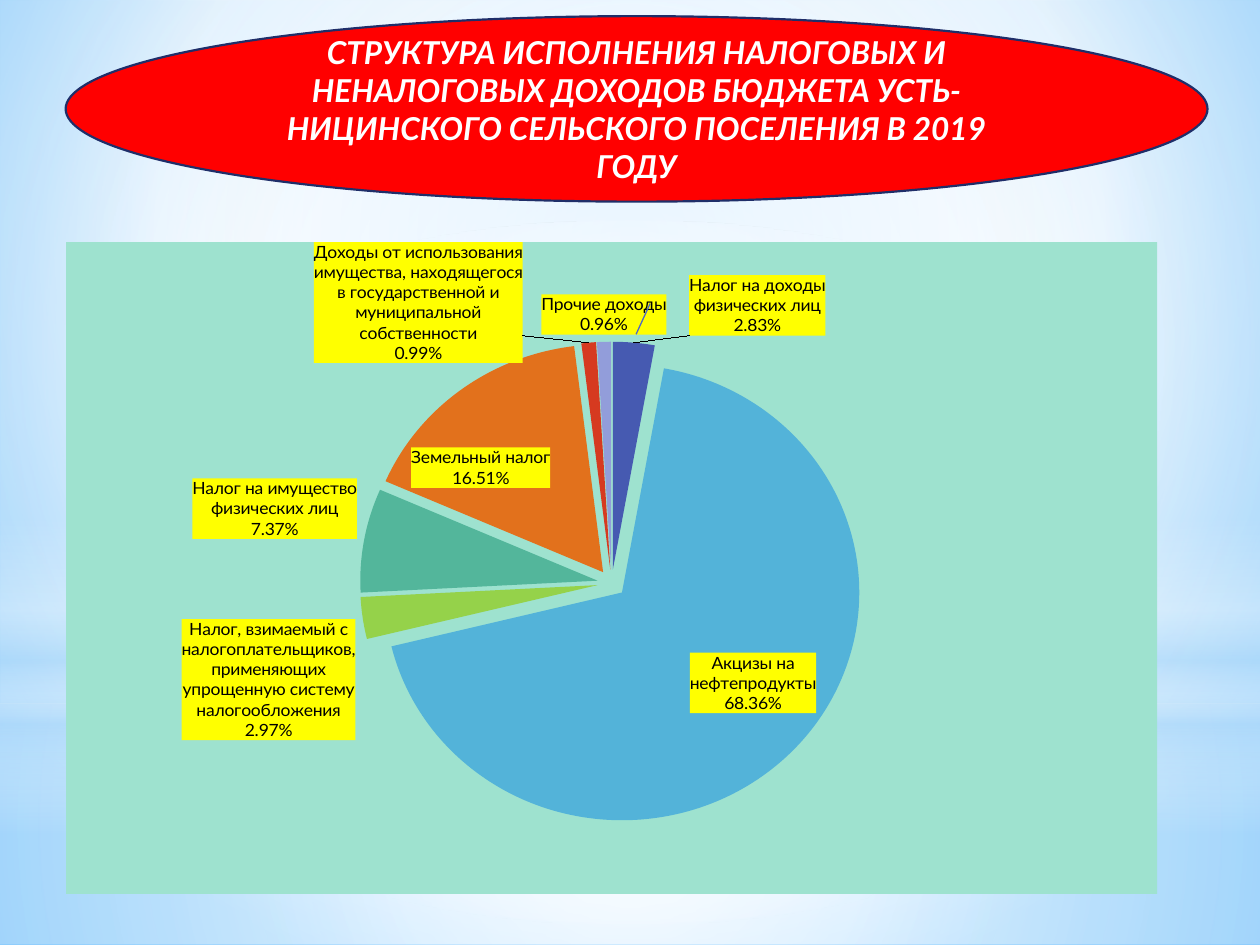
import pptx
import pptx.chart.data
import pptx.dml.color
import pptx.enum.chart
import pptx.enum.shapes
import pptx.enum.text
import pptx.oxml
import pptx.oxml.ns
import pptx.util
from dataclasses import dataclass

Pt = pptx.util.Pt
qn = pptx.oxml.ns.qn
SHAPE = pptx.enum.shapes.MSO_SHAPE
NAMESPACES = pptx.oxml.ns.nsdecls("a", "c")


@dataclass(frozen=True)
class Theme:
    font: str = "Lato"
    title_size: int = 18
    label_size: int = 10
    white: str = "FFFFFF"
    black: str = "000000"
    sky: str = "9ED5FF"
    azure: str = "5BB9FF"
    haze: str = "B4DCFA"
    title_fill: str = "FF0000"
    title_line: str = "1F2E69"
    chart_fill: str = "9EE2CF"
    label_fill: str = "FFFF00"
    leader: str = "4E67C8"
    slices: tuple = ("465AB1", "53B3D9", "95D24A", "53B69B", "E2711C", "D63A20", "929DDA")


THEME = Theme()
CENTRE = (50, 50, 50, 50)

TITLE = ("СТРУКТУРА ИСПОЛНЕНИЯ НАЛОГОВЫХ И НЕНАЛОГОВЫХ ДОХОДОВ БЮДЖЕТА "
         "УСТЬ-НИЦИНСКОГО СЕЛЬСКОГО ПОСЕЛЕНИЯ В 2019 ГОДУ")

# Category and share in percent
INCOME = [
    ("Налог на доходы физических лиц", 2.83),
    ("Акцизы на нефтепродукты", 68.36),
    ("Налог, взимаемый с налогоплательщиков, применяющих упрощенную систему "
     "налогообложения", 2.97),
    ("Налог на имущество физических лиц", 7.37),
    ("Земельный налог", 16.51),
    ("Доходы от использования имущества, находящегося в государственной и "
     "муниципальной собственности", 0.99),
    ("Прочие доходы", 0.96),
]
# Labels moved off their usual place, as fractions of the chart
LABEL_SHIFTS = {0: (0.05, 0), 5: (-0.06, 0)}


def rgb(value):
    return pptx.dml.color.RGBColor.from_string(value)


def paint(fill, color):
    fill.solid()
    fill.fore_color.rgb = rgb(color)


def gradient(stops, focus=None):
    """Gradient from (position, colour, opacity) stops; radial if focus is given."""
    marks = "".join(
        f'<a:gs pos="{position * 1000}"><a:srgbClr val="{color}">'
        f'<a:alpha val="{opacity * 1000}"/></a:srgbClr></a:gs>'
        for position, color, opacity in stops)
    if focus:
        sides = " ".join(f'{side}="{value * 1000}"' for side, value in zip("ltrb", focus))
        course = f'<a:path path="circle"><a:fillToRect {sides}/></a:path>'
    else:
        course = '<a:lin ang="5400000" scaled="0"/>'
    return pptx.oxml.parse_xml(
        f'<a:gradFill {NAMESPACES} rotWithShape="1"><a:gsLst>{marks}</a:gsLst>{course}</a:gradFill>')


def set_gradient(fill, holder, stops, focus=None):
    fill.gradient()
    old = next(holder.iter(qn("a:gradFill")))
    old.getparent().replace(old, gradient(stops, focus))


def add_glow(page, kind, top, height, stops, focus=None):
    shape = page.shapes.add_shape(kind, 0, Pt(top), Pt(720), Pt(height))
    shape.shadow.inherit = False
    shape.line.fill.background()
    set_gradient(shape.fill, shape.element.spPr, stops, focus)


def add_backdrop(page):
    white, haze = THEME.white, THEME.haze
    set_gradient(page.background.fill, page.element,
                 [(0, THEME.sky, 100), (60, white, 100), (100, THEME.azure, 100)],
                 (20, 10, 20, 60))
    add_glow(page, SHAPE.RECTANGLE, 402, 138,
             [(0, white, 91), (37, white, 76), (100, haze, 79)], CENTRE)
    add_glow(page, SHAPE.RECTANGLE, 0, 402,
             [(0, white, 89), (48, white, 62), (100, haze, 79)], CENTRE)
    add_glow(page, SHAPE.RECTANGLE, 296.5, 180,
             [(0, white, 0), (29, white, 30), (45, haze, 40),
              (55, white, 26), (65, haze, 60), (100, white, 0)])
    add_glow(page, SHAPE.OVAL, 126, 402, [(0, white, 100), (56, white, 0)], CENTRE)


def set_manual_layout(holder, place, **values):
    """Put a c:layout with the given settings at a place among the children."""
    settings = "".join(f'<c:{key} val="{value}"/>' for key, value in values.items())
    for old in holder.findall(qn("c:layout")):
        holder.remove(old)
    holder.insert(place, pptx.oxml.parse_xml(
        f"<c:layout {NAMESPACES}><c:manualLayout>{settings}</c:manualLayout></c:layout>"))


def chart_fill(color):
    return pptx.oxml.parse_xml(
        f'<c:spPr {NAMESPACES}><a:solidFill><a:srgbClr val="{color}"/></a:solidFill>'
        "<a:ln><a:noFill/></a:ln></c:spPr>")


def separator():
    return pptx.oxml.parse_xml(f"<c:separator {NAMESPACES}>\n</c:separator>")


def format_labels(labels):
    labels.show_category_name = True
    labels.show_value = True
    labels.show_percentage = False
    labels.number_format = '0.00"%"'
    labels.number_format_is_linked = False
    labels.font.size = Pt(THEME.label_size)
    labels.font.name = THEME.font
    labels.font.color.rgb = rgb(THEME.black)
    labels.position = pptx.enum.chart.XL_LABEL_POSITION.BEST_FIT
    element = labels._element
    element.find(qn("c:numFmt")).addnext(chart_fill(THEME.label_fill))
    element.find(qn("c:showBubbleSize")).addnext(separator())


def shift_label(labels, index, shift):
    """Give one label its own offset, keeping the common format."""
    settings = {"idx": index, "dLblPos": "bestFit", "showLegendKey": 0, "showVal": 1,
                "showCatName": 1, "showSerName": 0, "showPercent": 0, "showBubbleSize": 0}
    parts = "".join(f'<c:{name} val="{value}"/>' for name, value in settings.items())
    label = pptx.oxml.parse_xml(f"<c:dLbl {NAMESPACES}>{parts}</c:dLbl>")
    label.append(separator())
    set_manual_layout(label, 1, x=shift[0], y=shift[1])
    labels._element.find(qn("c:numFmt")).addprevious(label)


def add_income_chart(page):
    data = pptx.chart.data.CategoryChartData(number_format="0.00")
    data.categories = [name for name, _ in INCOME]
    data.add_series("Series 1", [share for _, share in INCOME])
    chart = page.shapes.add_chart(
        pptx.enum.chart.XL_CHART_TYPE.PIE, Pt(37.75), Pt(122.75), Pt(623.5), Pt(388), data).chart
    chart.has_title = False
    chart.has_legend = False
    chart.font.name = THEME.font
    chart.font.size = Pt(THEME.title_size)
    chart.font.color.rgb = rgb(THEME.black)
    space = chart._chartSpace
    space.find(qn("c:chart")).addnext(chart_fill(THEME.chart_fill))
    set_manual_layout(next(space.iter(qn("c:plotArea"))), 0, layoutTarget="inner",
                      xMode="edge", yMode="edge", x=0.08, y=0.153, w=0.84, h=0.741)

    # Slices, slightly pulled apart
    plot = chart.plots[0]
    plot.vary_by_categories = True
    series = plot.series[0]
    for index, color in enumerate(THEME.slices):
        paint(series.points[index].format.fill, color)
    series._element.find(qn("c:dPt")).addprevious(
        pptx.oxml.parse_xml(f'<c:explosion {NAMESPACES} val="6"/>'))

    format_labels(series.data_labels)
    for index, shift in LABEL_SHIFTS.items():
        shift_label(series.data_labels, index, shift)


def add_title(page):
    oval = page.shapes.add_shape(SHAPE.OVAL, Pt(37.5), Pt(9.25), Pt(652.5), Pt(106))
    oval.shadow.inherit = False
    paint(oval.fill, THEME.title_fill)
    oval.line.color.rgb = rgb(THEME.title_line)
    oval.line.width = Pt(1.25)
    frame = oval.text_frame
    frame.text = TITLE
    frame.word_wrap = True
    frame.vertical_anchor = pptx.enum.text.MSO_ANCHOR.MIDDLE
    para = frame.paragraphs[0]
    para.alignment = pptx.enum.text.PP_ALIGN.CENTER
    font = para.runs[0].font
    font.name, font.size, font.bold, font.italic = THEME.font, Pt(THEME.title_size), True, True
    font.color.rgb = rgb(THEME.white)


def add_leader(page):
    line = page.shapes.add_connector(
        pptx.enum.shapes.MSO_CONNECTOR.STRAIGHT, Pt(371.5), Pt(173.5), Pt(363.5), Pt(191))
    line.line.color.rgb = rgb(THEME.leader)
    line.line.width = Pt(0.75)
    line.element.spPr.append(pptx.oxml.parse_xml(f"<a:effectLst {NAMESPACES}/>"))


def main():
    deck = pptx.Presentation()
    deck.slide_width, deck.slide_height = Pt(720), Pt(540)
    page = deck.slides.add_slide(deck.slide_layouts[6])
    add_backdrop(page)
    add_income_chart(page)
    add_title(page)
    add_leader(page)
    deck.save("out.pptx")


if __name__ == "__main__":
    main()
